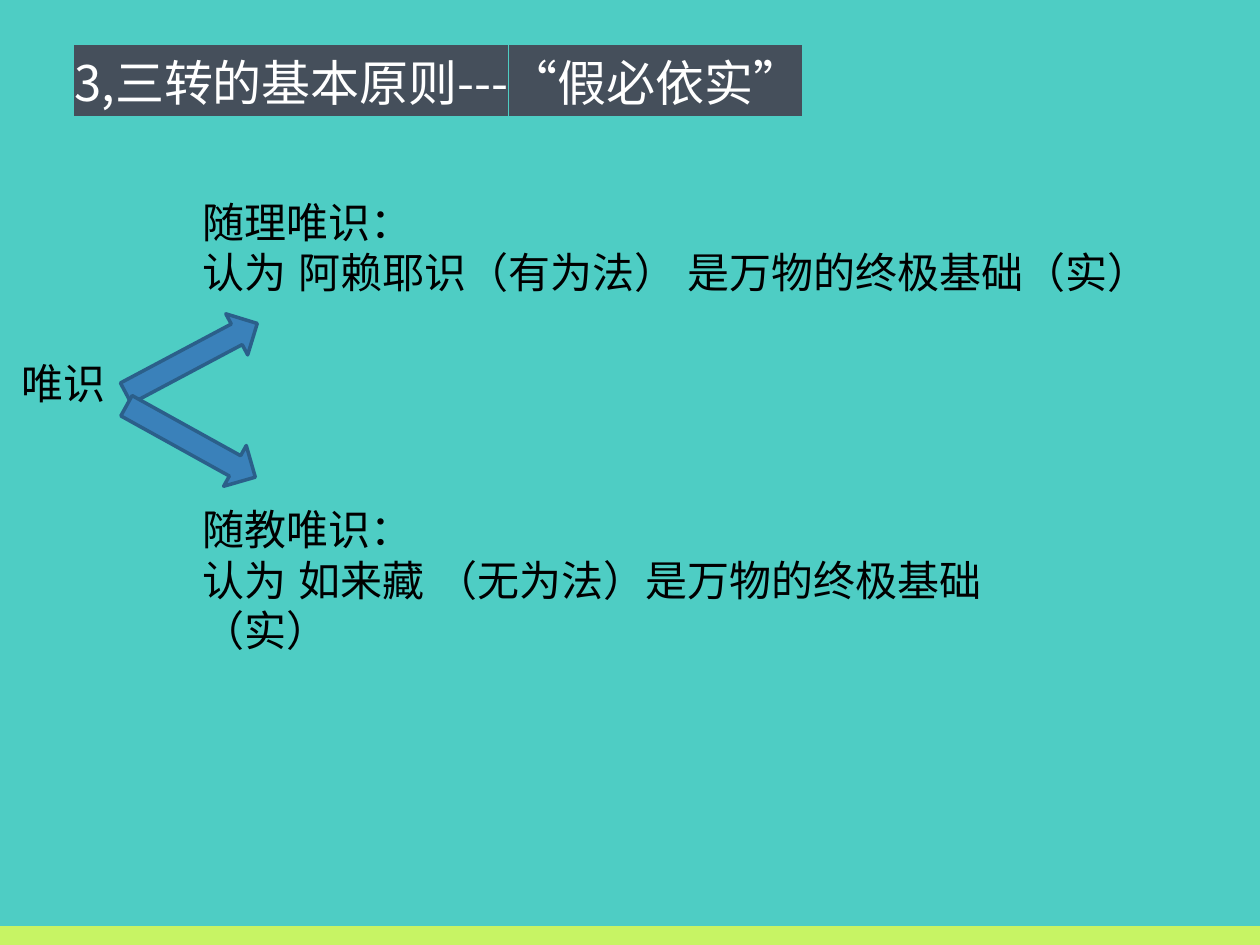
from dataclasses import dataclass

from lxml import etree
from pptx import Presentation
from pptx.dml.color import RGBColor
from pptx.enum.shapes import MSO_SHAPE
from pptx.enum.text import MSO_ANCHOR, MSO_AUTO_SIZE, PP_ALIGN
from pptx.oxml.ns import qn
from pptx.util import Pt

RECT, RIGHT_ARROW = MSO_SHAPE.RECTANGLE, MSO_SHAPE.RIGHT_ARROW
TOP, LEFT = MSO_ANCHOR.TOP, PP_ALIGN.LEFT
NO_FIT, GROW = MSO_AUTO_SIZE.NONE, MSO_AUTO_SIZE.SHAPE_TO_FIT_TEXT
TITLE_FONT, BODY_FONT = "Noto Sans CJK SC", "Arial"
WIDTH, HEIGHT, BAR_HEIGHT = 720, 540, 10.8


@dataclass
class Note:
    text: str
    x: float
    y: float
    w: float
    h: float


@dataclass
class Arrow:
    x: float
    y: float
    w: float
    h: float
    rotation: float


NOTES = [
    Note("唯识", 5, 200.9, 168, 36),
    Note("随理唯识：\n认为 阿赖耶识（有为法） 是万物的终极基础（实）", 108.7, 108.7, 577.4, 65),
    Note("随教唯识：\n认为 如来藏 （无为法）是万物的终极基础（实）", 108.7, 284.4, 518.4, 93.6),
]
ARROWS = [
    Arrow(67, 191.5, 85, 26.6, 332),
    Arrow(67, 239, 84.2, 26.6, 29),
]


def paint(fill, color: str) -> None:
    fill.solid()
    fill.fore_color.rgb = RGBColor.from_string(color)


def format_text(tf, size: float, font: str, color: str, highlight: str = "") -> None:
    for p in tf.paragraphs:
        p.alignment = LEFT
        for r in p.runs:
            r.font.size = Pt(size)
            paint(r.font.fill, color)
            rPr = r.font._element if hasattr(r.font, "_element") else r._r.get_or_add_rPr()
            if highlight:
                mark = etree.SubElement(rPr, qn("a:highlight"))
                etree.SubElement(mark, qn("a:srgbClr"), val=highlight)
            r.font.name = font
            etree.SubElement(rPr, qn("a:ea"), typeface=font)


def add_title(s, text: str) -> None:
    sp = s.shapes.title
    sp.left, sp.top, sp.width, sp.height = Pt(35.3), Pt(18), Pt(576.7), Pt(202.3)
    tf = sp.text_frame
    tf.text = text
    tf.word_wrap = True
    tf.auto_size = NO_FIT
    tf.vertical_anchor = TOP
    tf.margin_left = tf.margin_top = tf.margin_right = tf.margin_bottom = Pt(7.2)
    tf.paragraphs[0].line_spacing = 1.15
    format_text(tf, 28, TITLE_FONT, "FFFFFF", "454F5B")


def add_note(s, note: Note) -> None:
    sp = s.shapes.add_textbox(Pt(note.x), Pt(note.y), Pt(note.w), Pt(note.h))
    tf = sp.text_frame
    tf.text = note.text
    tf.word_wrap = True
    tf.auto_size = GROW
    format_text(tf, 24, BODY_FONT, "000000")


def add_arrow(s, arrow: Arrow) -> None:
    sp = s.shapes.add_shape(RIGHT_ARROW, Pt(arrow.x), Pt(arrow.y), Pt(arrow.w), Pt(arrow.h))
    sp.rotation = arrow.rotation
    sp.shadow.inherit = False
    paint(sp.fill, "3A81BA")
    paint(sp.line.fill, "2B5F8A")
    sp.line.width = Pt(2)


def add_bottom_bar(s) -> None:
    sp = s.shapes.add_shape(RECT, 0, Pt(HEIGHT - BAR_HEIGHT), Pt(WIDTH), Pt(BAR_HEIGHT))
    sp.shadow.inherit = False
    paint(sp.fill, "C7F464")
    sp.line.fill.background()


def main() -> None:
    prs = Presentation()
    prs.slide_width, prs.slide_height = Pt(WIDTH), Pt(HEIGHT)
    s = prs.slides.add_slide(prs.slide_layouts[5])
    paint(s.background.fill, "4ECDC4")
    add_bottom_bar(s)
    add_title(s, "3,三转的基本原则---“假必依实”")
    for arrow in ARROWS:
        add_arrow(s, arrow)
    for note in NOTES:
        add_note(s, note)
    prs.save("out.pptx")


if __name__ == "__main__":
    main()
